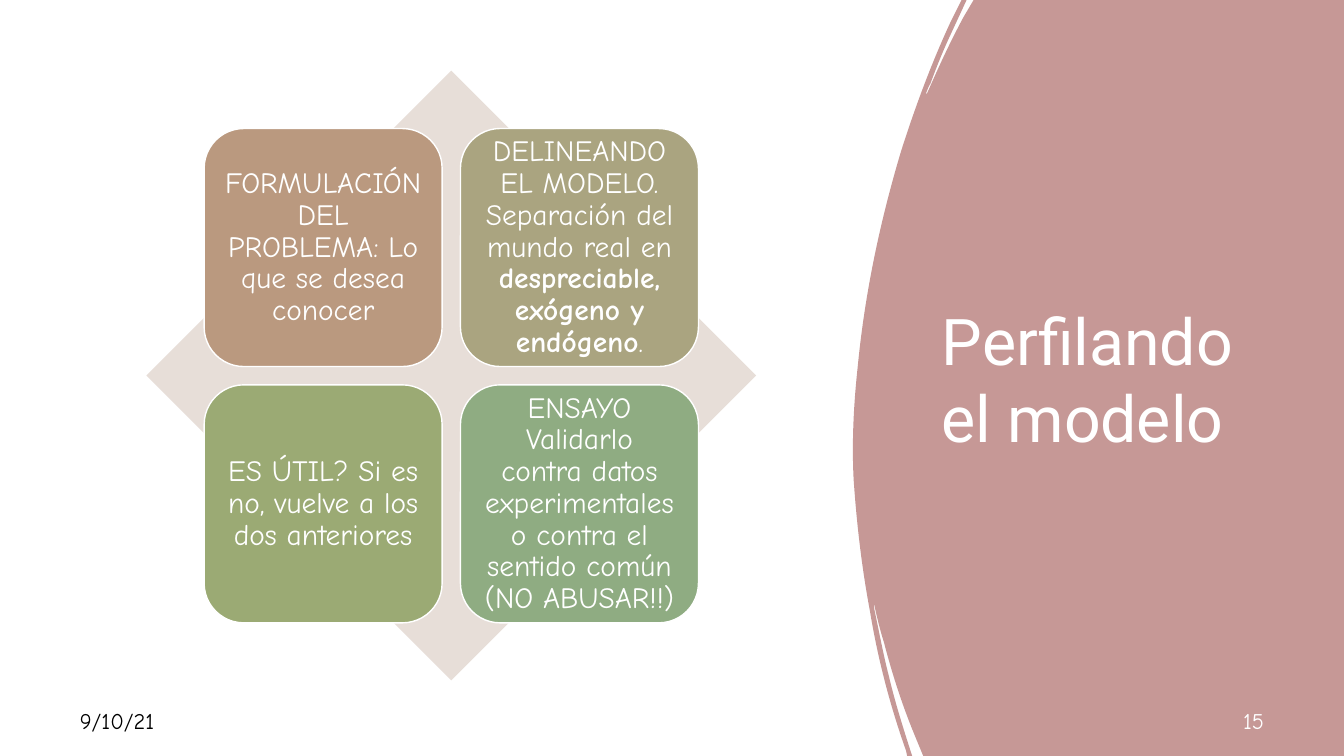
from lxml import etree
from pptx import Presentation
from pptx.dml.color import RGBColor
from pptx.enum.shapes import MSO_SHAPE
from pptx.enum.text import MSO_ANCHOR, MSO_AUTO_SIZE, PP_ALIGN
from pptx.oxml.ns import qn
from pptx.util import Pt

RECTANGLE, DIAMOND = MSO_SHAPE.RECTANGLE, MSO_SHAPE.DIAMOND
ROUNDED = MSO_SHAPE.ROUNDED_RECTANGLE
LEFT, CENTER, RIGHT = PP_ALIGN.LEFT, PP_ALIGN.CENTER, PP_ALIGN.RIGHT
MIDDLE, NO_AUTOFIT = MSO_ANCHOR.MIDDLE, MSO_AUTO_SIZE.NONE
TITLE_ONLY = 5

COLORS = {
    "panel": "C69896",
    "diamond": "E7DED8",
    "problem": "BA997F",
    "model": "AAA480",
    "useful": "9BAA74",
    "test": "8FAC82",
    "white": "FFFFFF",
    "black": "000000",
}
HEADING_FONT, BODY_FONT = "Roboto", "Comic Neue"

PAGE_WIDTH, PAGE_HEIGHT = 960, 540
CARD_LEFT, CARD_TOP = 145.8, 91.8
CARD_SIZE, CARD_PITCH = 170, 183.1
CARD_INSET = 6.4

# Each card: colour name and its spans as (text, bold)
CARDS = [
    ("problem", [("FORMULACIÓN DEL PROBLEMA: Lo que se desea conocer", False)]),
    ("model", [
        ("DELINEANDO EL MODELO. Separación del mundo real en ", False),
        ("despreciable, exógeno y endógeno", True),
        (".", False),
    ]),
    ("useful", [("ES ÚTIL? Si es no, vuelve a los dos anteriores", False)]),
    ("test", [("ENSAYO Validarlo contra datos experimentales o contra "
               "el sentido común (NO ABUSAR!!)", False)]),
]

# Panel outline: one point is a straight step, three points are a Bézier curve
PANEL_START = (960, 0)
PANEL_STEPS = [
    [(695.5, 0)],
    [(688.3, 12.2)],
    [(679, 29.5), (671, 46.8), (663.1, 64.8)],
    [(662.4, 66.2), (662.4, 67), (661, 67.7)],
    [(662.4, 64.8), (663.1, 61.9), (664.6, 59.8)],
    [(668.9, 48.2), (673.2, 37.4), (678.2, 26.6)],
    [(690.5, 0)],
    [(686.9, 0)],
    [(679, 15.8)],
    [(665.3, 45.4), (653.8, 76.3), (643.7, 108)],
    [(628.6, 158.4), (617.8, 209.5), (612.7, 262.1)],
    [(609.8, 288.7), (608.4, 316.1), (609.8, 342.7)],
    [(612, 374.4), (615.6, 405.4), (621.4, 436.3)],
    [(627.1, 470.9), (635.8, 504), (647.3, 536.4)],
    [(648, 540)],
    [(651.6, 540)],
    [(650.9, 537.8)],
    [(645.1, 519.8), (639.4, 501.8), (635, 483.1)],
    [(630.7, 466.6), (627.8, 450), (624.2, 433.4)],
    [(624.2, 432.7), (624.2, 432), (624.2, 430.6)],
    [(626.4, 440.6), (628.6, 450), (631.4, 458.6)],
    [(637.2, 481), (644.4, 503.3), (653, 524.2)],
    [(659.5, 540)],
    [(960, 540)],
]


def color(name):
    return RGBColor.from_string(COLORS[name])


def set_values(target, **values):
    for name, value in values.items():
        setattr(target, name, value)


def paint(shape, fill, line=None):
    shape.shadow.inherit = False
    shape.fill.solid()
    shape.fill.fore_color.rgb = color(fill)
    if line:
        shape.line.color.rgb = color(line)
        shape.line.width = Pt(1)
    else:
        shape.line.fill.background()


def add_block(shapes, kind, left, top, width, height, fill, line=None):
    block = shapes.add_shape(kind, Pt(left), Pt(top), Pt(width), Pt(height))
    paint(block, fill, line)
    return block


def write(shape, spans, size, font, ink, **para_format):
    """Fill the shape with one vertically centred paragraph of (text, bold) spans."""
    frame = shape.text_frame
    set_values(frame, word_wrap=True, auto_size=NO_AUTOFIT, vertical_anchor=MIDDLE)
    para = frame.paragraphs[0]
    set_values(para, **para_format)
    for text, bold in spans:
        span = para.add_run()
        span.text = text
        set_values(span.font, name=font, size=Pt(size), bold=bold)
        span.font.color.rgb = color(ink)


def bend(segment, controls, shape):
    """Turn a straight outline segment into a Bézier curve."""
    segment.tag = qn("a:cubicBezTo")
    for position, (x, y) in enumerate(controls):
        point = etree.Element(
            qn("a:pt"), x=str(Pt(x) - shape.left), y=str(Pt(y) - shape.top))
        segment.insert(position, point)


def add_panel(page):
    builder = page.shapes.build_freeform(*map(Pt, PANEL_START))
    ends = [tuple(map(Pt, step[-1])) for step in PANEL_STEPS]
    builder.add_line_segments(ends, close=True)
    panel = builder.convert_to_shape()
    segments = list(panel.element.iter(qn("a:lnTo")))
    for segment, step in zip(segments, PANEL_STEPS):
        if len(step) == 3:
            bend(segment, step[:2], panel)
    paint(panel, "panel")
    return panel


def add_title(page, text):
    title = page.shapes.title
    set_values(title, left=Pt(665.6), top=Pt(50.4), width=Pt(244), height=Pt(440))
    write(title, [(text, False)], 46, HEADING_FONT, "white",
          alignment=LEFT, line_spacing=1.0)
    return title


def add_footer(page, text, left, width, ink, alignment):
    box = page.shapes.add_textbox(Pt(left), Pt(500.4), Pt(width), Pt(28.8))
    write(box, [(text, False)], 16, BODY_FONT, ink,
          alignment=alignment, space_after=Pt(6))


def add_card(group, index, fill, spans):
    row, column = divmod(index, 2)
    card = add_block(
        group.shapes, ROUNDED, CARD_LEFT + column * CARD_PITCH,
        CARD_TOP + row * CARD_PITCH, CARD_SIZE, CARD_SIZE, fill, "white")
    for side in ("left", "top", "right", "bottom"):
        setattr(card.text_frame, f"margin_{side}", Pt(CARD_INSET))
    write(card, spans, 21, BODY_FONT, "white", alignment=CENTER, line_spacing=0.9)


def add_matrix(page):
    group = page.shapes.add_group_shape()
    add_block(group.shapes, DIAMOND, 104.5, 50.4, 435.6, 435.6, "diamond")
    for index, (fill, spans) in enumerate(CARDS):
        add_card(group, index, fill, spans)


def main():
    deck = Presentation()
    set_values(deck, slide_width=Pt(PAGE_WIDTH), slide_height=Pt(PAGE_HEIGHT))
    page = deck.slides.add_slide(deck.slide_layouts[TITLE_ONLY])
    add_block(page.shapes, RECTANGLE, 0, 0, PAGE_WIDTH, PAGE_HEIGHT, "white")
    panel = add_panel(page)
    title = add_title(page, "Perfilando el modelo")
    panel.element.addnext(title.element)
    add_footer(page, "9/10/21", 50, 216, "black", LEFT)
    add_footer(page, "15", 766, 144, "white", RIGHT)
    add_matrix(page)
    deck.save("out.pptx")


if __name__ == "__main__":
    main()
